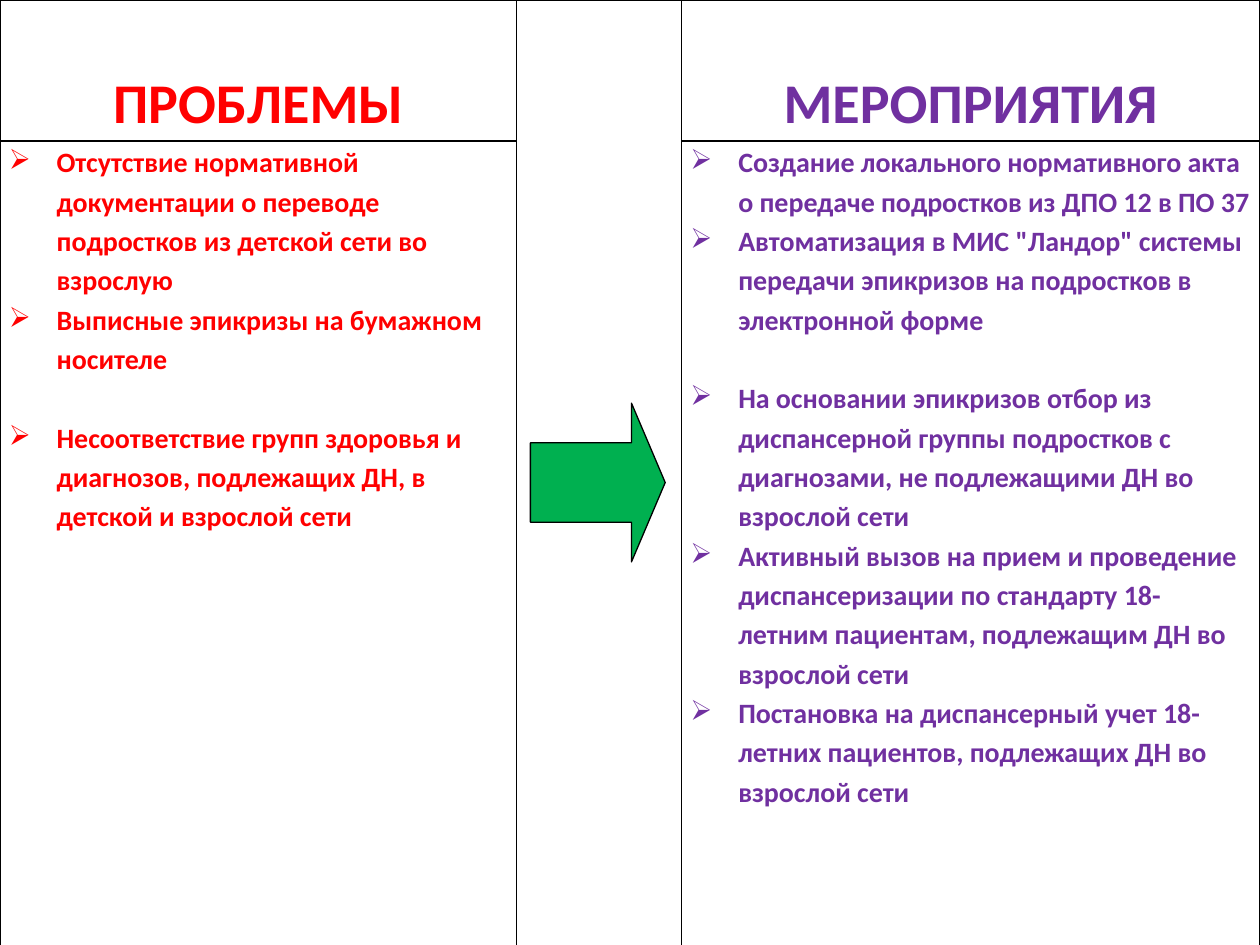
from pptx import Presentation
from pptx.dml.color import RGBColor
from pptx.enum.shapes import MSO_SHAPE
from pptx.enum.text import MSO_ANCHOR, PP_ALIGN
from pptx.oxml import parse_xml
from pptx.oxml.ns import nsdecls
from pptx.util import Inches, Pt

COLORS = {
    "problems": "FF0000",
    "measures": "7030A0",
    "arrow": "00B050",
    "line": "000000",
}
FONT = "Calibri"
COLUMN_WIDTHS = (4.1, 1.31, 4.59)
ROW_HEIGHTS = (1.12, 6.78)
BLANK_LINE = Pt(22.45)

# Each column holds groups of bullets, set apart by one line of space.
PROBLEMS = [
    [
        "Отсутствие нормативной документации о переводе подростков из детской сети во взрослую",
        "Выписные эпикризы на бумажном носителе",
    ],
    ["Несоответствие групп здоровья и диагнозов, подлежащих ДН, в детской и взрослой сети"],
]
MEASURES = [
    [
        "Создание локального нормативного акта о передаче подростков из ДПО 12 в ПО 37",
        'Автоматизация в МИС "Ландор" системы передачи эпикризов на подростков в электронной форме',
    ],
    [
        "На основании эпикризов отбор из диспансерной группы подростков с диагнозами, "
        "не подлежащими ДН во взрослой сети",
        "Активный вызов на прием и проведение диспансеризации по стандарту 18-летним пациентам, "
        "подлежащим ДН во взрослой сети",
        "Постановка на диспансерный учет 18-летних пациентов, подлежащих ДН во взрослой сети",
    ],
]


def rgb(name):
    return RGBColor.from_string(COLORS[name])


def add_span(para, text, size, color):
    span = para.add_run()
    span.text = text
    span.font.name = FONT
    span.font.size = Pt(size)
    span.font.bold = True
    span.font.color.rgb = rgb(color)


def style_cell(cell):
    cell.fill.background()
    cell.margin_left = cell.margin_right = Inches(0.07)
    cell.margin_top = cell.margin_bottom = 0
    properties = cell._tc.get_or_add_tcPr()
    for index, side in enumerate("LRTB"):
        border = parse_xml(
            f'<a:ln{side} {nsdecls("a")} w="{Pt(1)}"><a:solidFill>'
            f'<a:srgbClr val="{COLORS["line"]}"/></a:solidFill></a:ln{side}>'
        )
        properties.insert(index, border)


def fill_heading(cell, text, color):
    cell.vertical_anchor = MSO_ANCHOR.MIDDLE
    para = cell.text_frame.paragraphs[0]
    para.alignment = PP_ALIGN.CENTER
    para.line_spacing = 2.0
    add_span(para, text, 32, color)


def fill_bullets(cell, groups, color):
    frame = cell.text_frame
    para = frame.paragraphs[0]
    for group_index, group in enumerate(groups):
        for item_index, text in enumerate(group):
            if group_index or item_index:
                para = frame.add_paragraph()
            para.line_spacing = 1.15
            if group_index and not item_index:
                para.space_before = BLANK_LINE
            properties = para._p.get_or_add_pPr()
            properties.set("marL", str(Inches(0.38)))
            properties.set("indent", str(-Inches(0.38)))
            properties.append(parse_xml(f'<a:buChar {nsdecls("a")} char="➢"/>'))
            add_span(para, text, 16, color)


def add_comparison_table(page, left, top, width, height):
    table = page.shapes.add_table(2, 3, left, top, width, height).table
    table.first_row = False
    table.horz_banding = False
    for column, share in zip(table.columns, COLUMN_WIDTHS):
        column.width = int(width * share / sum(COLUMN_WIDTHS))
    for row, share in zip(table.rows, ROW_HEIGHTS):
        row.height = int(height * share / sum(ROW_HEIGHTS))
    for cell in table.iter_cells():
        style_cell(cell)
    table.cell(0, 1).merge(table.cell(1, 1))

    fill_heading(table.cell(0, 0), "ПРОБЛЕМЫ", "problems")
    fill_heading(table.cell(0, 2), "МЕРОПРИЯТИЯ", "measures")
    fill_bullets(table.cell(1, 0), PROBLEMS, "problems")
    fill_bullets(table.cell(1, 2), MEASURES, "measures")


def add_arrow(page, left, top, width, height):
    arrow = page.shapes.add_shape(MSO_SHAPE.RIGHT_ARROW, left, top, width, height)
    arrow.adjustments[0] = 0.5
    arrow.adjustments[1] = 0.25
    arrow.shadow.inherit = False
    arrow.fill.solid()
    arrow.fill.fore_color.rgb = rgb("arrow")
    arrow.line.color.rgb = rgb("line")
    arrow.line.width = Pt(0.75)


def main():
    deck = Presentation()
    deck.slide_width = Inches(10)
    deck.slide_height = Inches(7.5)
    page = deck.slides.add_slide(deck.slide_layouts[6])
    add_comparison_table(page, 0, 0, Inches(10), Inches(7.9))
    add_arrow(page, Inches(4.21), Inches(3.2), Inches(1.07), Inches(1.26))
    deck.save("out.pptx")


if __name__ == "__main__":
    main()
